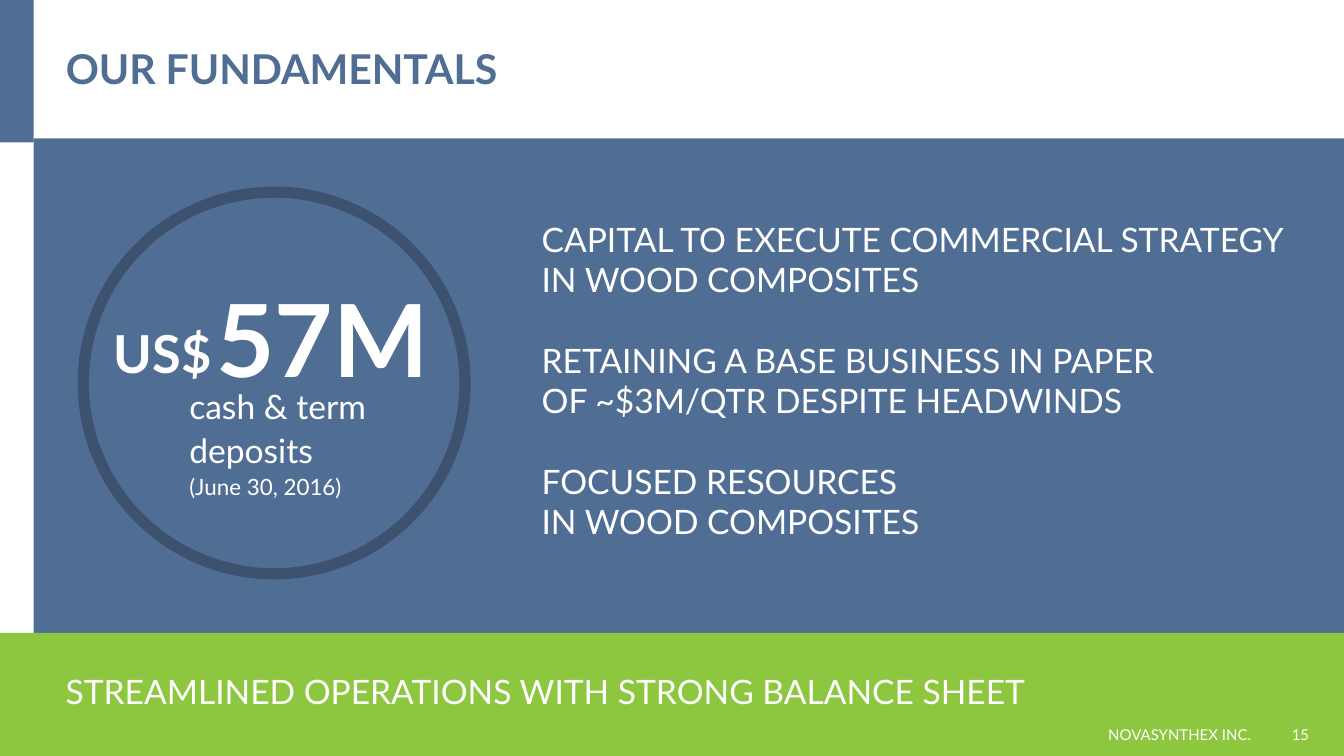
from pptx import Presentation
from pptx.dml.color import RGBColor
from pptx.enum.shapes import MSO_SHAPE as SHAPE
from pptx.enum.text import MSO_ANCHOR as ANCHOR, MSO_AUTO_SIZE as AUTO, PP_ALIGN as ALIGN
from pptx.oxml.ns import qn
from pptx.util import Inches, Pt

BLUE, NAVY, GREEN, WHITE = "506E94", "3C526F", "8DC63F", "FFFFFF"


def color(value):
    return RGBColor.from_string(value)


def write(p, text, size=18, fill=WHITE, bold=False, font="Lato"):
    for i, line in enumerate(text.split("\n")):
        if i:
            p.add_line_break()
        if line:
            r = p.add_run()
            r.text = line
            r.font.name = font
            r.font.size = Pt(size)
            r.font.bold = bold
            r.font.color.rgb = color(fill)


class SlideBuilder:
    def __init__(self, slide):
        self.s = slide

    def shape(self, kind, box, fill=None, line=None, width=0):
        sp = self.s.shapes.add_shape(kind, *map(Inches, box))
        sp.shadow.inherit = False
        if fill:
            sp.fill.solid()
            sp.fill.fore_color.rgb = color(fill)
        else:
            sp.fill.background()
        if line:
            sp.line.color.rgb = color(line)
            sp.line.width = Pt(width)
        else:
            sp.line.fill.background()

    def frame(self, sp, anchor=ANCHOR.TOP, wrap=True):
        tf = sp.text_frame
        tf.auto_size = AUTO.NONE
        tf.word_wrap = wrap
        tf.vertical_anchor = anchor
        return tf

    def text(self, text, box, anchor=ANCHOR.TOP, wrap=True, align=ALIGN.LEFT, **style):
        tf = self.frame(self.s.shapes.add_textbox(*map(Inches, box)), anchor, wrap)
        p = tf.paragraphs[0]
        p.alignment = align
        write(p, text, **style)
        return p

    def placeholder(self, sp, box):
        sp.left, sp.top, sp.width, sp.height = map(Inches, box)
        sp._element.getparent().append(sp._element)

    def title(self, text, box, **style):
        sp = self.s.shapes.title
        self.placeholder(sp, box)
        p = self.frame(sp, ANCHOR.MIDDLE).paragraphs[0]
        p.alignment = ALIGN.LEFT
        p.line_spacing = 0.9
        write(p, text, **style)

    def body(self, items, box, gap, **style):
        sp = self.s.placeholders[1]
        self.placeholder(sp, box)
        tf = self.frame(sp)
        for i, item in enumerate(items):
            p = tf.add_paragraph() if i else tf.paragraphs[0]
            pPr = p._p.get_or_add_pPr()
            pPr.set("marL", "0")
            pPr.set("indent", "0")
            pPr.append(pPr.makeelement(qn("a:buNone"), {}))
            p.space_before = Pt(gap if i else 0)
            write(p, item, **style)


def main():
    prs = Presentation()
    prs.slide_width, prs.slide_height = Inches(10), Inches(10 * 9 / 16)
    b = SlideBuilder(prs.slides.add_slide(prs.slide_layouts[1]))

    b.shape(SHAPE.RECTANGLE, (0.25, 1.03, 9.75, 4.25), BLUE)
    b.shape(SHAPE.RECTANGLE, (0, 4.71, 10, 0.93), GREEN)
    b.shape(SHAPE.OVAL, (0.62, 1.43, 2.84, 2.84), line=NAVY, width=6)

    b.title("OUR FUNDAMENTALS", (0.39, 0, 9, 1.06), size=22, fill=BLUE, bold=True)
    for label, left, width in (("NOVASYNTHEX INC.", 6.24, 3.17), ("15", 9.41, 0.43)):
        b.text(label, (left, 5.31, width, 0.31), ANCHOR.MIDDLE, align=ALIGN.RIGHT, size=8)

    p = b.text("cash & term\ndeposits\n", (1.31, 2.79, 2.08, 0.99))
    p.line_spacing = 1.1
    write(p, "(June 30, 2016)", size=12)
    b.text("57M", (1.51, 2.01, 1.88, 1.01), wrap=False, size=54, bold=True)
    b.shape(SHAPE.RECTANGLE, (0, 0, 0.25, 1.06), BLUE)

    b.body(
        [
            "CAPITAL TO EXECUTE COMMERCIAL STRATEGY IN WOOD COMPOSITES",
            "RETAINING A BASE BUSINESS IN PAPER\nOF ~$3M/QTR DESPITE HEADWINDS",
            "FOCUSED RESOURCES\nIN WOOD COMPOSITES",
        ],
        (3.93, 1.58, 5.91, 2.52),
        gap=21.6,
    )
    b.text("US$", (0.75, 2.34, 0.97, 0.57), wrap=False, size=28, bold=True)
    b.text("STREAMLINED OPERATIONS WITH STRONG BALANCE SHEET", (0.39, 4.94, 9.02, 0.4))

    prs.save("out.pptx")


if __name__ == "__main__":
    main()
